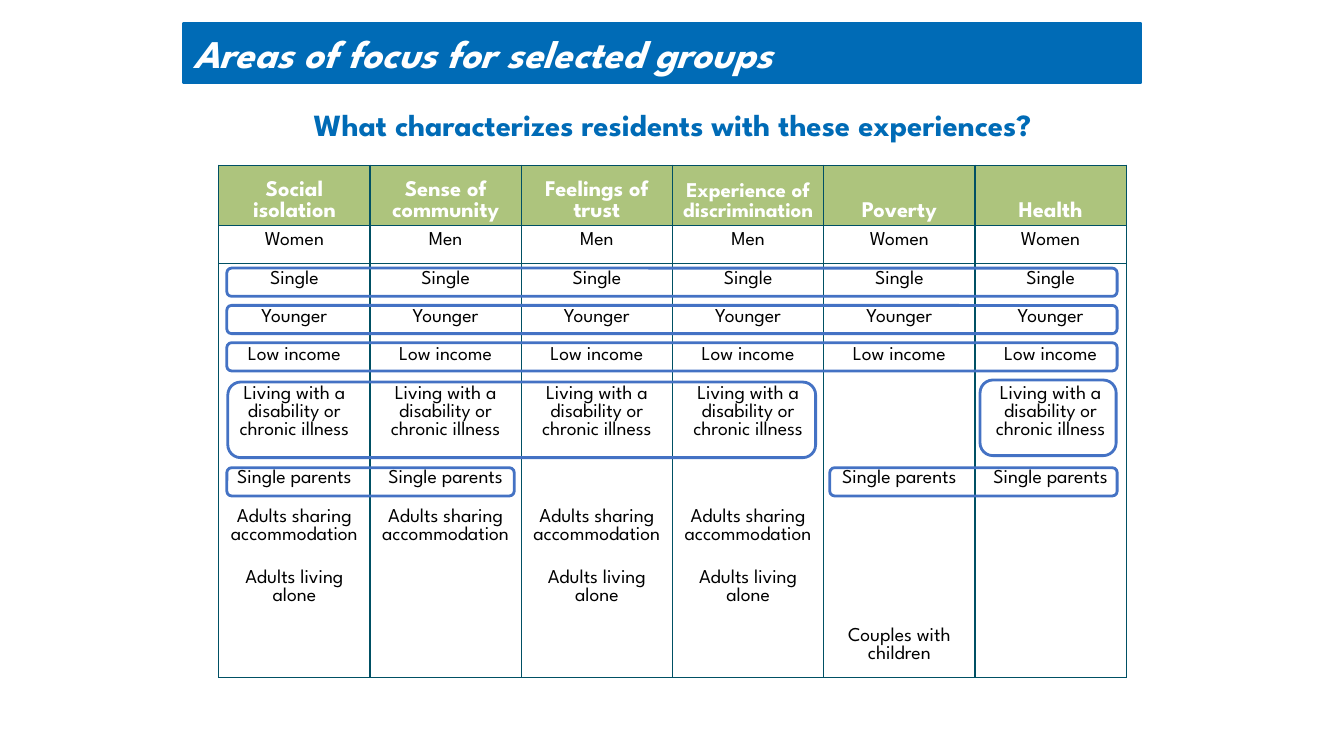
from lxml.etree import SubElement
from pptx import Presentation
from pptx.dml.color import RGBColor
from pptx.enum.shapes import MSO_SHAPE
from pptx.enum.text import MSO_ANCHOR, PP_ALIGN
from pptx.oxml.ns import qn
from pptx.util import Pt

PX = 9144  # 100 px to the inch
FONT = "League Spartan"
COLORS = {
    "blue": "006BB6", "green": "ADC47D", "grid": "005064",
    "outline": "4472C4", "white": "FFFFFF", "black": "000000",
}
PLAIN_TABLE_STYLE = "{2D5ABB26-0587-4C30-8999-92F81FD0307C}"

COLUMN_WIDTH = 150
ROW_HEIGHTS = [59, 38, 38, 38, 38, 84, 38, 61, 61, 52]
HEADERS = ["Social isolation", "Sense of community", "Feelings of trust",
           "Experience of discrimination", "Poverty", "Health"]
GENDERS = ["Women", "Men", "Men", "Men", "Women", "Women"]
# Each characteristic with the columns it applies to
CHARACTERISTICS = [
    ("Single", range(6)),
    ("Younger", range(6)),
    ("Low income", range(6)),
    ("Living with a disability or chronic illness", (0, 1, 2, 3, 5)),
    ("Single parents", (0, 1, 4, 5)),
    ("Adults sharing accommodation", range(4)),
    ("Adults living alone", (0, 2, 3)),
    ("Couples with children", (4,)),
]
# Left, top, width, height, measured from the table corner
OUTLINES = [
    (9, 215, 583, 75),
    *[(8, 102 + 37 * step, 883, 28) for step in range(3)],
    (8, 300, 285, 28),
    (606, 300, 285, 28),
    (755, 213, 135, 75),
]


def color(name):
    return RGBColor.from_string(COLORS[name])


def place(left, top, width, height):
    return [length * PX for length in (left, top, width, height)]


def set_margins(target, left, top, right, bottom):
    target.margin_left, target.margin_top = left * PX, top * PX
    target.margin_right, target.margin_bottom = right * PX, bottom * PX


def add_text(frame, text, size, color_name, align, bold=False, italic=False):
    frame.word_wrap = True
    paragraph = frame.paragraphs[0]
    paragraph.alignment = align
    run = paragraph.add_run()
    run.text = text
    run.font.name, run.font.size = FONT, Pt(size)
    run.font.bold, run.font.italic = bold, italic
    run.font.color.rgb = color(color_name)


def add_title_bar(slide, box):
    shape = slide.shapes.add_shape(MSO_SHAPE.RECTANGLE, *place(*box))
    shape.shadow.inherit = False
    shape.fill.solid()
    shape.fill.fore_color.rgb = color("blue")
    shape.line.color.rgb = color("blue")
    shape.line.width = Pt(1.5)
    frame = shape.text_frame
    frame.vertical_anchor = MSO_ANCHOR.MIDDLE
    set_margins(frame, 10, 4, 0, 4)
    add_text(frame, "Areas of focus for selected groups", 28, "white",
             PP_ALIGN.LEFT, bold=True, italic=True)


def add_question(slide, box):
    frame = slide.shapes.add_textbox(*place(*box)).text_frame
    set_margins(frame, 10, 5, 10, 5)
    add_text(frame, "What characterizes residents with these experiences?",
             22, "blue", PP_ALIGN.CENTER, bold=True)


def add_borders(cell, sides):
    properties = cell._tc.get_or_add_tcPr()
    for side in "LRTB":
        line = SubElement(properties, qn(f"a:ln{side}"))
        if side in sides:
            line.set("w", str(Pt(1)))
            fill = SubElement(line, qn("a:solidFill"))
            SubElement(fill, qn("a:srgbClr")).set("val", COLORS["grid"])
        else:
            SubElement(line, qn("a:noFill"))


def border_sides(row):
    last = len(ROW_HEIGHTS) - 1
    return {0: "LRTB", 1: "LRTB", 2: "LRT", last: "LRB"}.get(row, "LR")


def fill_header_cell(cell, text):
    long_word = "discrimination" in text
    side = 0 if long_word else 3
    set_margins(cell, side, 3, side, 3)
    cell.vertical_anchor = MSO_ANCHOR.BOTTOM
    cell.fill.solid()
    cell.fill.fore_color.rgb = color("green")
    add_text(cell.text_frame, text, 15 if long_word else 16, "white",
             PP_ALIGN.CENTER, bold=True)


def fill_body_cell(cell, text, is_last_row):
    padding = 7 if text and not is_last_row else 3
    set_margins(cell, 3, padding, 3, padding)
    cell.vertical_anchor = MSO_ANCHOR.TOP
    cell.fill.background()
    if text:
        add_text(cell.text_frame, text, 14, "black", PP_ALIGN.CENTER)


def add_groups_table(slide, left, top):
    rows = [HEADERS, GENDERS]
    for label, columns in CHARACTERISTICS:
        rows.append([label if column in columns else ""
                     for column in range(len(HEADERS))])
    box = place(left, top, COLUMN_WIDTH * len(HEADERS), sum(ROW_HEIGHTS))
    graphic_frame = slide.shapes.add_table(len(rows), len(HEADERS), *box)
    table = graphic_frame.table
    table.first_row = table.horz_banding = False
    for style in graphic_frame.element.iter(qn("a:tableStyleId")):
        style.text = PLAIN_TABLE_STYLE
    for column in table.columns:
        column.width = COLUMN_WIDTH * PX
    for row, (texts, height) in enumerate(zip(rows, ROW_HEIGHTS)):
        table.rows[row].height = height * PX
        for column, text in enumerate(texts):
            cell = table.cell(row, column)
            add_borders(cell, border_sides(row))
            if row == 0:
                fill_header_cell(cell, text)
            else:
                fill_body_cell(cell, text, row == len(rows) - 1)


def add_outlines(slide, left, top):
    for x, y, width, height in OUTLINES:
        shape = slide.shapes.add_shape(
            MSO_SHAPE.ROUNDED_RECTANGLE,
            *place(left + x, top + y, width, height))
        shape.shadow.inherit = False
        shape.adjustments[0] = 0.17
        shape.fill.background()
        shape.line.color.rgb = color("outline")
        shape.line.width = Pt(2)


def main():
    presentation = Presentation()
    presentation.slide_width, presentation.slide_height = 1333 * PX, 750 * PX
    slide = presentation.slides.add_slide(presentation.slide_layouts[6])
    # Heading
    add_title_bar(slide, (182, 23, 950, 59))
    add_question(slide, (167, 100, 1000, 67))
    # Table and the outlines of shared characteristics
    table_corner = (217, 164)
    add_groups_table(slide, *table_corner)
    add_outlines(slide, *table_corner)
    presentation.save("out.pptx")


if __name__ == "__main__":
    main()
